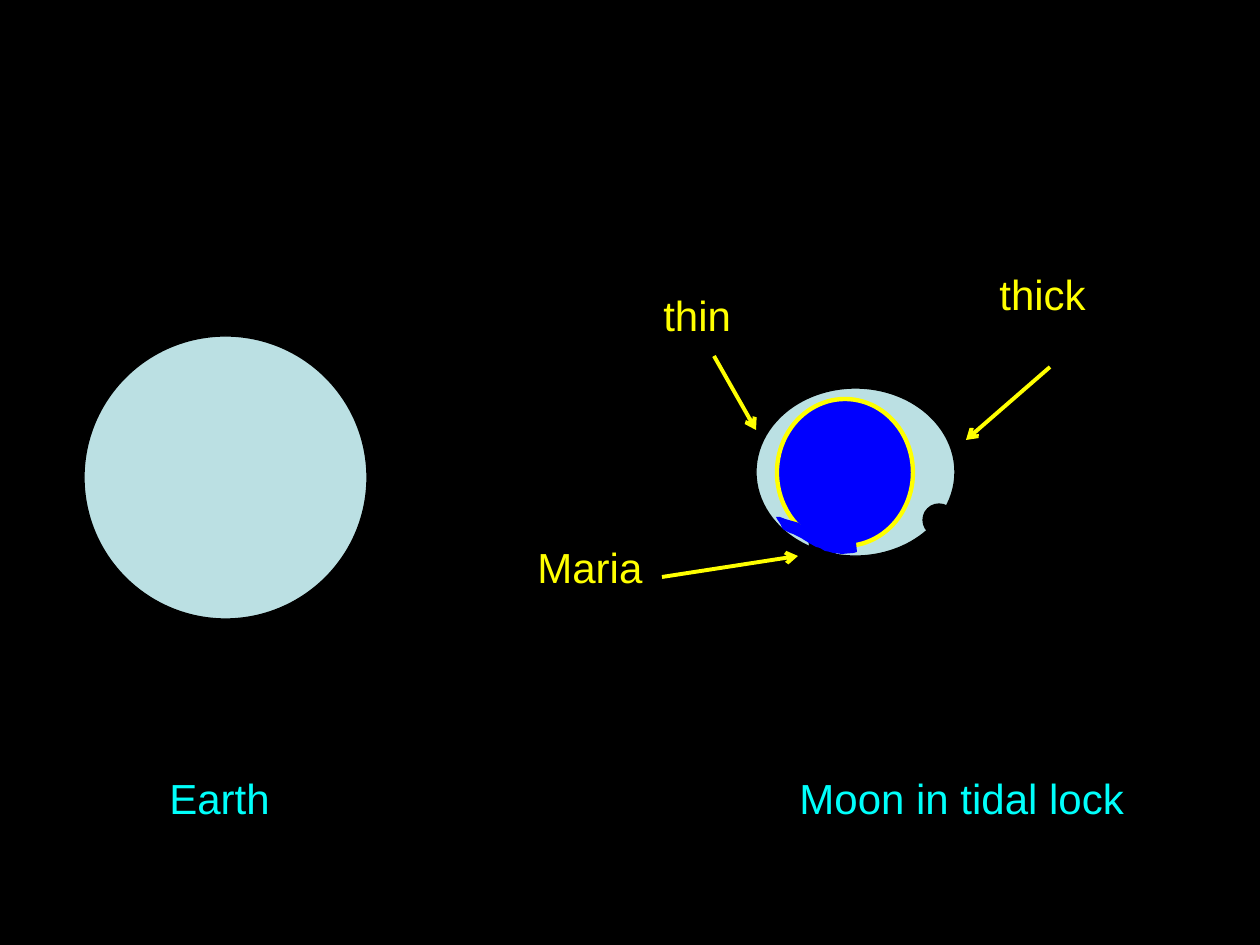
from lxml import etree
from pptx import Presentation
from pptx.dml.color import RGBColor
from pptx.enum.shapes import MSO_CONNECTOR, MSO_SHAPE
from pptx.enum.text import MSO_AUTO_SIZE
from pptx.oxml.ns import qn
from pptx.util import Emu, Pt

OVAL = MSO_SHAPE.OVAL
LINE = MSO_CONNECTOR.STRAIGHT
GROW = MSO_AUTO_SIZE.SHAPE_TO_FIT_TEXT
SCALE = 914400 / 126
BLACK, PALE, BLUE = "000000", "BBE0E3", "0000FF"
YELLOW, CYAN = "FFFF00", "00FFFB"
MARE = [
    (45, 137), (43, 135), (29, 131), (24, 129), (20, 129), (21, 131),
    (25, 137), (26, 140), (28, 142), (34, 145), (37, 146), (43, 149),
    (45, 150), (53, 155), (60, 159), (64, 160), (69, 163), (74, 164),
    (77, 165), (86, 166), (98, 165), (101, 164), (100, 154), (98, 150),
    (95, 145), (88, 142), (87, 139), (86, 136), (78, 134), (76, 132),
    (73, 131), (67, 131), (62, 132), (62, 135),
]


def px(num):
    return Emu(round(num * SCALE))


def hue(code):
    return RGBColor.from_string(code)


def oval(slide, box, fill, edge=BLACK, width=0.75):
    shape = slide.shapes.add_shape(OVAL, *map(px, box))
    shape.shadow.inherit = False
    shape.fill.solid()
    shape.fill.fore_color.rgb = hue(fill)
    shape.line.color.rgb = hue(edge)
    shape.line.width = Pt(width)


def label(slide, box, text, color, stop=None):
    frame = slide.shapes.add_textbox(*map(px, box)).text_frame
    frame.word_wrap = True
    frame.auto_size = GROW
    para = frame.paragraphs[0]
    para.text = text
    if stop:
        tabs = etree.SubElement(para._p.get_or_add_pPr(), qn("a:tabLst"))
        etree.SubElement(tabs, qn("a:tab"), pos=str(px(stop)), algn="l")
    for run in para.runs:
        run.font.name = "Arial"
        run.font.size = Pt(24)
        run.font.color.rgb = hue(color)


def arrow(slide, start, end):
    line = slide.shapes.add_connector(LINE, *map(px, start + end))
    line.line.color.rgb = hue(YELLOW)
    line.line.width = Pt(2.25)
    etree.SubElement(line.line._get_or_add_ln(), qn("a:tailEnd"), type="arrow")
    etree.SubElement(line._element.spPr, qn("a:effectLst"))


def mare(slide, left, top):
    points = [(left + x, top + y) for x, y in MARE]
    form = slide.shapes.build_freeform(*points[0], scale=SCALE)
    form.add_line_segments(points[1:], close=True)
    shape = form.convert_to_shape()
    shape.shadow.inherit = False
    shape.fill.solid()
    shape.fill.fore_color.rgb = hue(BLUE)
    shape.line.fill.background()


def moon(slide, box):
    left, top, wide, high = box
    oval(slide, box, PALE)
    oval(slide, (left + 21, top + 11, 136, 147), BLUE, YELLOW, 2.5)
    for x, y in ((wide - 32, 116), (53, 137)):
        oval(slide, (left + x, top + y, 32, 32), BLACK)
    mare(slide, left, top)
    notes = (
        ("thick", (231, -126), (294, -21), (210, 52)),
        ("thin", (-105, -105), (-42, -32), (0, 42)),
        ("Maria", (-231, 147), (-94, 189), (42, 168)),
    )
    for text, spot, *ends in notes:
        label(slide, (left + spot[0], top + spot[1], 199, 63), text, YELLOW)
        arrow(slide, *((left + x, top + y) for x, y in ends))


def main():
    deck = Presentation()
    deck.slide_width, deck.slide_height = px(1260), px(945)
    slide = deck.slides.add_slide(deck.slide_layouts[6])
    slide.background.fill.solid()
    slide.background.fill.fore_color.rgb = hue(BLACK)
    oval(slide, (84, 336, 283, 283), PALE)
    moon(slide, (756, 388, 199, 168))
    label(slide, (157, 766, 1103, 63), "Earth\tMoon in tidal lock", CYAN, 630)
    deck.save("out.pptx")


if __name__ == "__main__":
    main()
